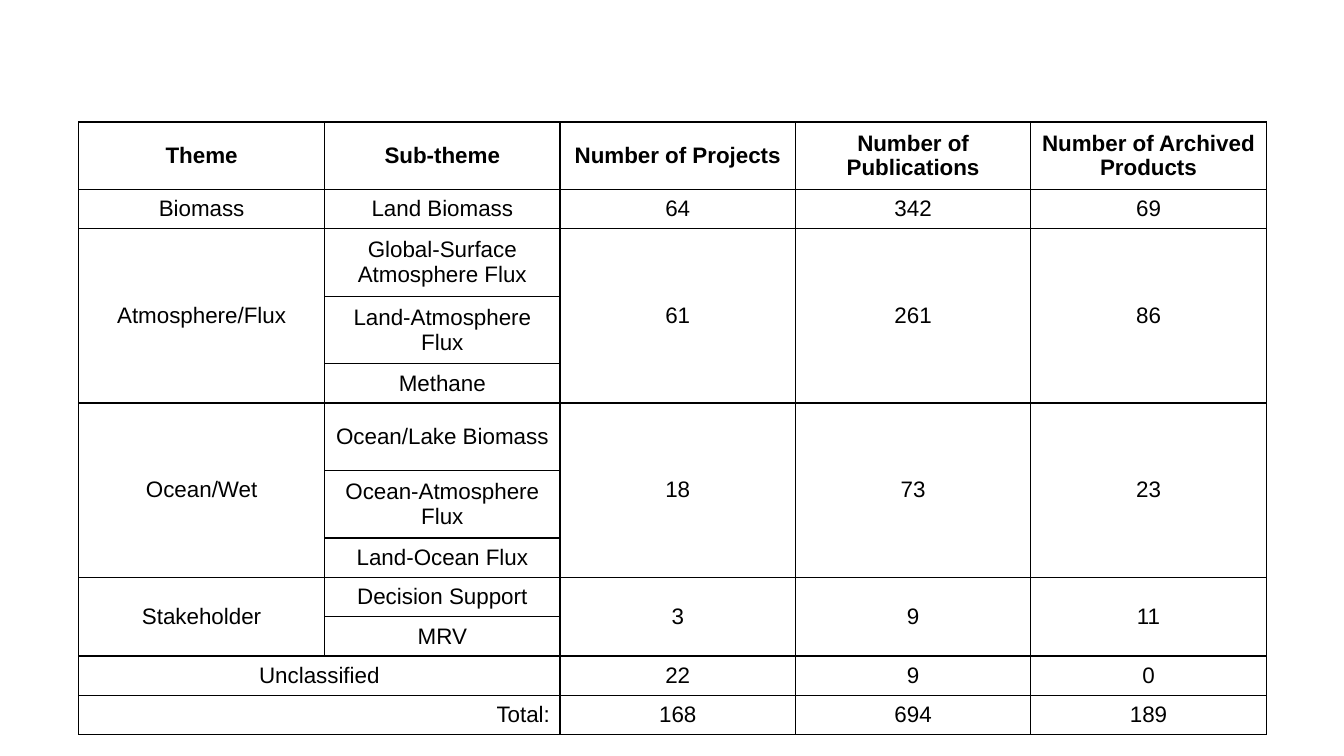
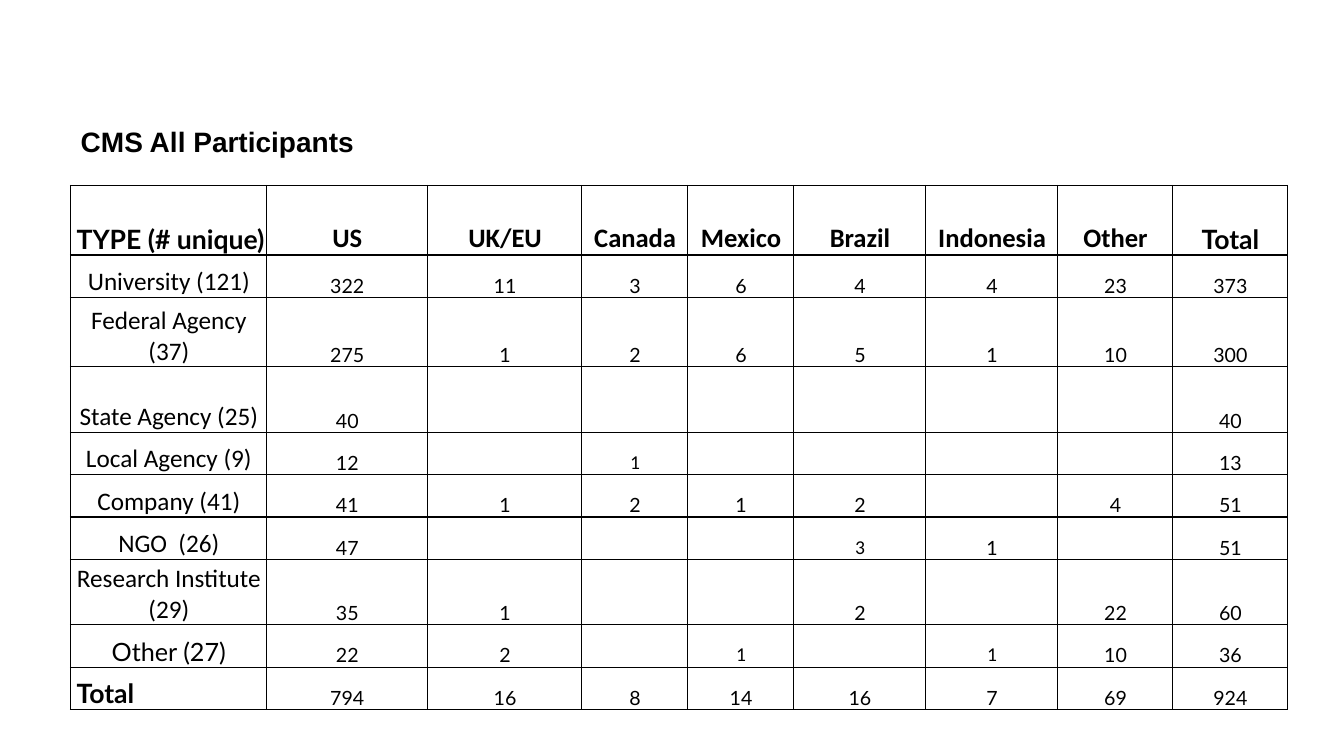
from lxml import etree
from pptx import Presentation
from pptx.dml.color import RGBColor
from pptx.enum import text
from pptx.util import Inches, Pt

BLACK = RGBColor(0x00, 0x00, 0x00)
WHITE = RGBColor(0xFF, 0xFF, 0xFF)
DRAWING = "http://schemas.openxmlformats.org/drawingml/2006/main"
LEFT, CENTER, RIGHT = text.PP_ALIGN.LEFT, text.PP_ALIGN.CENTER, text.PP_ALIGN.RIGHT
MIDDLE, BOTTOM = text.MSO_ANCHOR.MIDDLE, text.MSO_ANCHOR.BOTTOM


def write(frame, words, size=16, font="Arial", bold=False, align=CENTER):
    para = frame.paragraphs[0]
    para.alignment = align
    span = para.add_run()
    span.text = words
    span.font.size = Pt(size)
    span.font.name = font
    span.font.bold = bold
    span.font.color.rgb = BLACK


def add_grid(page, left, top, widths, heights, anchor):
    """Add a white table with 1 pt black rules."""
    grid = page.shapes.add_table(
        len(heights), len(widths), Inches(left), Inches(top),
        Inches(sum(widths)), Inches(sum(heights))).table
    grid.first_row = grid.horz_banding = False
    for column, width in zip(grid.columns, widths):
        column.width = Inches(width)
    for row, height in zip(grid.rows, heights):
        row.height = Inches(height)
        for cell in row.cells:
            properties = cell._tc.get_or_add_tcPr()
            for side in ("lnL", "lnR", "lnT", "lnB"):
                line = etree.SubElement(properties, f"{{{DRAWING}}}{side}", w=str(Pt(1)))
                paint = etree.SubElement(line, f"{{{DRAWING}}}solidFill")
                etree.SubElement(paint, f"{{{DRAWING}}}srgbClr", val=str(BLACK))
            cell.fill.solid()
            cell.fill.fore_color.rgb = WHITE
            cell.vertical_anchor = anchor
    return grid


deck = Presentation()
deck.slide_width = Inches(13.33)
deck.slide_height = Inches(7.5)

# Slide 1: themes, each with its sub-themes and counts
page = deck.slides.add_slide(deck.slide_layouts[6])
headings = ["Theme", "Sub-theme", "Number of Projects", "Number of Publications",
            "Number of Archived Products"]
themes = [
    ("Biomass", ["Land Biomass"], [64, 342, 69]),
    ("Atmosphere/Flux",
     ["Global-Surface Atmosphere Flux", "Land-Atmosphere Flux", "Methane"],
     [61, 261, 86]),
    ("Ocean/Wet",
     ["Ocean/Lake Biomass", "Ocean-Atmosphere Flux", "Land-Ocean Flux"],
     [18, 73, 23]),
    ("Stakeholder", ["Decision Support", "MRV"], [3, 9, 11]),
    ("Unclassified", [], [22, 9, 0]),
    ("Total:", [], [168, 694, 189]),
]
TALL, SHORT = 0.67, 0.39
heights = [TALL, SHORT] + [TALL, TALL, SHORT] * 2 + [SHORT] * 4
widths = [2.44] + [(11.78 - 2.44) / 4] * 4
grid = add_grid(page, 0.78, 1.21, widths, heights, MIDDLE)
for column, heading in enumerate(headings):
    write(grid.cell(0, column).text_frame, heading, bold=True)

row = 1
for theme, subthemes, counts in themes:
    last = row + max(len(subthemes), 1) - 1
    if not subthemes:
        grid.cell(row, 0).merge(grid.cell(row, 1))
    elif last > row:
        for column in (0, 2, 3, 4):
            grid.cell(row, column).merge(grid.cell(last, column))
    write(grid.cell(row, 0).text_frame, theme,
          align=RIGHT if theme == "Total:" else CENTER)
    for offset, subtheme in enumerate(subthemes):
        write(grid.cell(row + offset, 1).text_frame, subtheme)
    for column, count in enumerate(counts, 2):
        write(grid.cell(row, column).text_frame, str(count))
    row = last + 1

# Slide 2: title
page = deck.slides.add_slide(deck.slide_layouts[5])
title = page.shapes.title
title.left, title.top = Inches(0.7), Inches(1.18)
title.width, title.height = Inches(11.05), Inches(0.44)
title.text_frame.vertical_anchor = MIDDLE
write(title.text_frame, "CMS All Participants", size=20, bold=True, align=LEFT)

# Slide 2: participants by type and country
participants = [
    ["TYPE (# unique)", "US", "UK/EU", "Canada", "Mexico", "Brazil", "Indonesia",
     "Other", "Total"],
    ["University (121)", 322, 11, 3, 6, 4, 4, 23, 373],
    ["Federal Agency (37)", 275, 1, 2, 6, 5, 1, 10, 300],
    ["State Agency (25)", 40, "", "", "", "", "", "", 40],
    ["Local Agency (9)", 12, "", 1, "", "", "", "", 13],
    ["Company (41)", 41, 1, 2, 1, 2, "", 4, 51],
    ["NGO  (26)", 47, "", "", "", 3, 1, "", 51],
    ["Research Institute (29)", 35, 1, "", "", 2, "", 22, 60],
    ["Other (27)", 22, 2, "", 1, "", 1, 10, 36],
    ["Total", 794, 16, 8, 14, 16, 7, 69, 924],
]
calibri_counts = {(4, 3), (6, 5), (8, 4), (8, 6)}
last_row, last_column = len(participants) - 1, len(participants[0]) - 1
widths = [1.94, 1.6, 1.53, 1.05, 1.05, 1.31, 1.31, 1.14, 1.14]
heights = [0.69, 0.42, 0.69, 0.65, 0.42, 0.42, 0.42, 0.65, 0.42, 0.42]
grid = add_grid(page, 0.7, 1.84, widths, heights, BOTTOM)
for row, values in enumerate(participants):
    for column, value in enumerate(values):
        cell = grid.cell(row, column)
        corner = column == 0 and row in (0, last_row)
        cell.margin_left = Inches(0.06 if corner else 0.01)
        cell.margin_top = Inches(0.01)
        cell.margin_right = cell.margin_bottom = 0
        if value == "":
            continue
        if corner or row == 0:
            size, font = 19, "Lato" if column in (0, last_column) else "Calibri"
        elif column == 0:
            size, font = 18, "Lato" if value == "Other (27)" else "Calibri"
        else:
            size, font = 14, "Calibri" if (row, column) in calibri_counts else "Lato"
        write(cell.text_frame, str(value), size=size, font=font,
              bold=corner or row == 0, align=LEFT if corner else CENTER)

deck.save("out.pptx")
